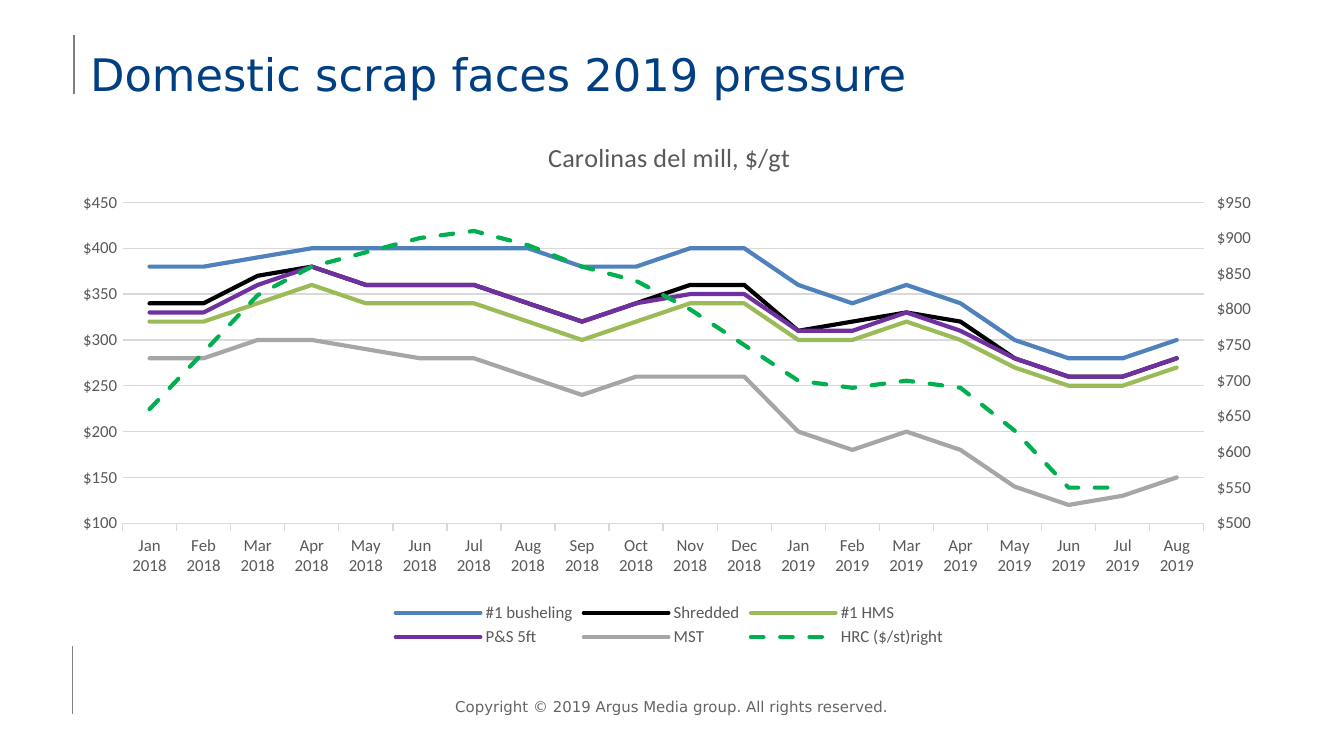
"""Build the slide on domestic scrap prices."""
from copy import deepcopy
from dataclasses import dataclass

from pptx import Presentation
from pptx.chart.data import CategoryChartData as Data
from pptx.dml.color import RGBColor as Color
from pptx.enum.chart import XL_CHART_TYPE as Kind
from pptx.enum.chart import XL_LEGEND_POSITION as Place
from pptx.enum.chart import XL_TICK_MARK as Tick
from pptx.enum.dml import MSO_LINE as Dash
from pptx.enum.shapes import MSO_CONNECTOR as Link
from pptx.enum.text import MSO_ANCHOR as Anchor
from pptx.enum.text import PP_ALIGN as Align
from pptx.oxml import parse_xml
from pptx.oxml.ns import nsdecls, qn
from pptx.util import Inches, Pt


@dataclass(frozen=True)
class Theme:
    """Colours, fonts and type sizes."""
    navy: str = "003F82"
    foot: str = "636463"
    rule: str = "808080"
    grid: str = "D9D9D9"
    label: str = "595959"
    sans: str = "DejaVu Sans"
    plot: str = "Calibri"
    head: float = 24
    title: float = 14
    small: float = 9
    tiny: float = 8
    thin: float = 0.75
    thick: float = 2.25


MONTHS = "Jan Feb Mar Apr May Jun Jul Aug Sep Oct Nov Dec".split()
DATES = [f"{m} 2018" for m in MONTHS] + [f"{m} 2019" for m in MONTHS[:8]]
SERIES = [
    ("#1 busheling", "4F81BD", [380, 380, 390, 400, 400, 400, 400, 400, 380, 380,
                                400, 400, 360, 340, 360, 340, 300, 280, 280, 300]),
    ("Shredded", "000000", [340, 340, 370, 380, 360, 360, 360, 340, 320, 340,
                            360, 360, 310, 320, 330, 320, 280, 260, 260, 280]),
    ("#1 HMS", "9BBB59", [320, 320, 340, 360, 340, 340, 340, 320, 300, 320,
                          340, 340, 300, 300, 320, 300, 270, 250, 250, 270]),
    ("P&S 5ft", "7030A0", [330, 330, 360, 380, 360, 360, 360, 340, 320, 340,
                           350, 350, 310, 310, 330, 310, 280, 260, 260, 280]),
    ("MST", "A6A6A6", [280, 280, 300, 300, 290, 280, 280, 260, 240, 260,
                       260, 260, 200, 180, 200, 180, 140, 120, 130, 150]),
    ("HRC ($/st)right", "00B050", [660, 740, 820, 860, 880, 900, 910, 890, 860, 840,
                                   800, 750, 700, 690, 700, 690, 630, 550, 550, None]),
]


class Deck:
    """Hold the theme and the current slide."""

    def __init__(self, theme):
        self.theme = theme
        self.show = Presentation()
        self.show.slide_width = Inches(10)
        self.show.slide_height = Inches(10 * 9 / 16)
        self.slide = self.show.slides.add_slide(self.show.slide_layouts[6])

    def font(self, font, name, size, color):
        """Style one font."""
        font.name, font.size, font.bold = name, Pt(size), False
        font.color.rgb = Color.from_string(color)

    def stroke(self, line, color, width):
        """Style one line."""
        line.color.rgb = Color.from_string(color)
        line.width = Pt(width)

    def rule(self, x, top, end):
        """Draw an upright rule."""
        line = self.slide.shapes.add_connector(
            Link.STRAIGHT, Inches(x), Inches(top), Inches(x), Inches(end))
        self.stroke(line.line, self.theme.rule, self.theme.thin)
        line._element.spPr.append(parse_xml(f"<a:effectLst {nsdecls('a')}/>"))

    def text(self, words, box, size, color, align, anchor):
        """Add a text box with no insets."""
        frame = self.slide.shapes.add_textbox(*map(Inches, box)).text_frame
        frame.word_wrap, frame.vertical_anchor = True, anchor
        frame.margin_left = frame.margin_right = 0
        frame.margin_top = frame.margin_bottom = 0
        para = frame.paragraphs[0]
        para.text, para.alignment = words, align
        self.font(para.font, self.theme.sans, size, color)

    def layout(self, host, spot, box, inner=False):
        """Place the plot or legend by shares of the chart."""
        for old in host.findall(qn("c:layout")):
            host.remove(old)
        target = '<c:layoutTarget val="inner"/>' if inner else ""
        modes = '<c:xMode val="edge"/><c:yMode val="edge"/>'
        sides = "".join(f'<c:{k} val="{v}"/>' for k, v in zip("xywh", box))
        host.insert(spot, parse_xml(
            f"<c:layout {nsdecls('c')}><c:manualLayout>{target}{modes}{sides}"
            "</c:manualLayout></c:layout>"))

    def split(self, area, low, high):
        """Move the last series to a second axis on the right."""
        left = area.find(qn("c:lineChart"))
        right = deepcopy(left)
        left.remove(left.findall(qn("c:ser"))[-1])
        for ser in right.findall(qn("c:ser"))[:-1]:
            right.remove(ser)
        left.addnext(right)
        dates, price = (deepcopy(area.find(qn(f"c:{k}"))) for k in ("catAx", "valAx"))
        for tag, ident in zip(right.findall(qn("c:axId")), ("501", "502")):
            tag.set("val", ident)
        for axis, ident, cross in ((dates, "501", "502"), (price, "502", "501")):
            axis.find(qn("c:axId")).set("val", ident)
            axis.find(qn("c:crossAx")).set("val", cross)
        dates.find(qn("c:delete")).set("val", "1")
        price.remove(price.find(qn("c:majorGridlines")))
        scale = price.find(qn("c:scaling"))
        for key, val in (("axPos", "r"), ("crosses", "max"), ("majorTickMark", "out")):
            price.find(qn(f"c:{key}")).set("val", val)
        for key, val in (("min", low), ("max", high)):
            scale.find(qn(f"c:{key}")).set("val", str(val))
        area.findall(qn("c:valAx"))[-1].addnext(price)
        price.addnext(dates)

    def chart(self, title, box):
        """Add the price chart."""
        look, data = self.theme, Data()
        data.categories = DATES
        for name, _, vals in SERIES:
            data.add_series(name, vals)
        chart = self.slide.shapes.add_chart(Kind.LINE, *map(Inches, box), data).chart
        self.font(chart.font, look.plot, look.small, look.label)
        chart.has_title = True
        para = chart.chart_title.text_frame.paragraphs[0]
        para.text = title
        self.font(para.font, look.plot, look.title, look.label)
        chart.has_legend = True
        chart.legend.position = Place.BOTTOM
        chart.legend.include_in_layout = False
        self.font(chart.legend.font, look.plot, look.small, look.label)
        plot = chart.plots[0]
        plot.vary_by_categories = False
        for ser, (_, color, _) in zip(plot.series, SERIES):
            ser.smooth = False
            self.stroke(ser.format.line, color, look.thick)
            ser.format.line._get_or_add_ln().set("cap", "rnd")
        ser.format.line.dash_style = Dash.DASH
        dates, price = chart.category_axis, chart.value_axis
        for axis in (dates, price):
            axis.minor_tick_mark = Tick.NONE
            self.font(axis.tick_labels.font, look.plot, look.small, look.label)
        dates.major_tick_mark, price.major_tick_mark = Tick.OUTSIDE, Tick.NONE
        self.stroke(dates.format.line, look.grid, look.thin)
        price.format.line.fill.background()
        price.has_major_gridlines = True
        self.stroke(price.major_gridlines.format.line, look.grid, look.thin)
        price.major_unit = 50
        price.minimum_scale, price.maximum_scale = 100, 450
        price.tick_labels.number_format = '"$"#,##0'
        price.tick_labels.number_format_is_linked = False
        area = chart._chartSpace.chart.plotArea
        self.split(area, 500, 950)
        self.layout(area, 0, (0.05, 0.16, 0.89, 0.6), inner=True)
        self.layout(chart.legend._element, 1, (0.27, 0.9, 0.46, 0.1))


def main():
    """Build and save the slide."""
    look = Theme()
    deck = Deck(look)
    deck.rule(0.54, 4.81, 5.31)
    deck.rule(0.55, 0.26, 0.7)
    deck.text("Copyright © 2019 Argus Media group. All rights reserved.",
              (3.27, 5.06, 3.46, 0.4), look.tiny, look.foot, Align.CENTER, Anchor.MIDDLE)
    deck.text("Domestic scrap faces 2019 pressure", (0.67, 0.25, 8.75, 0.5),
              look.head, look.navy, Align.LEFT, Anchor.BOTTOM)
    deck.chart("Carolinas del mill, $/gt", (0.46, 0.87, 9.04, 3.98))
    deck.show.save("out.pptx")


if __name__ == "__main__":
    main()
